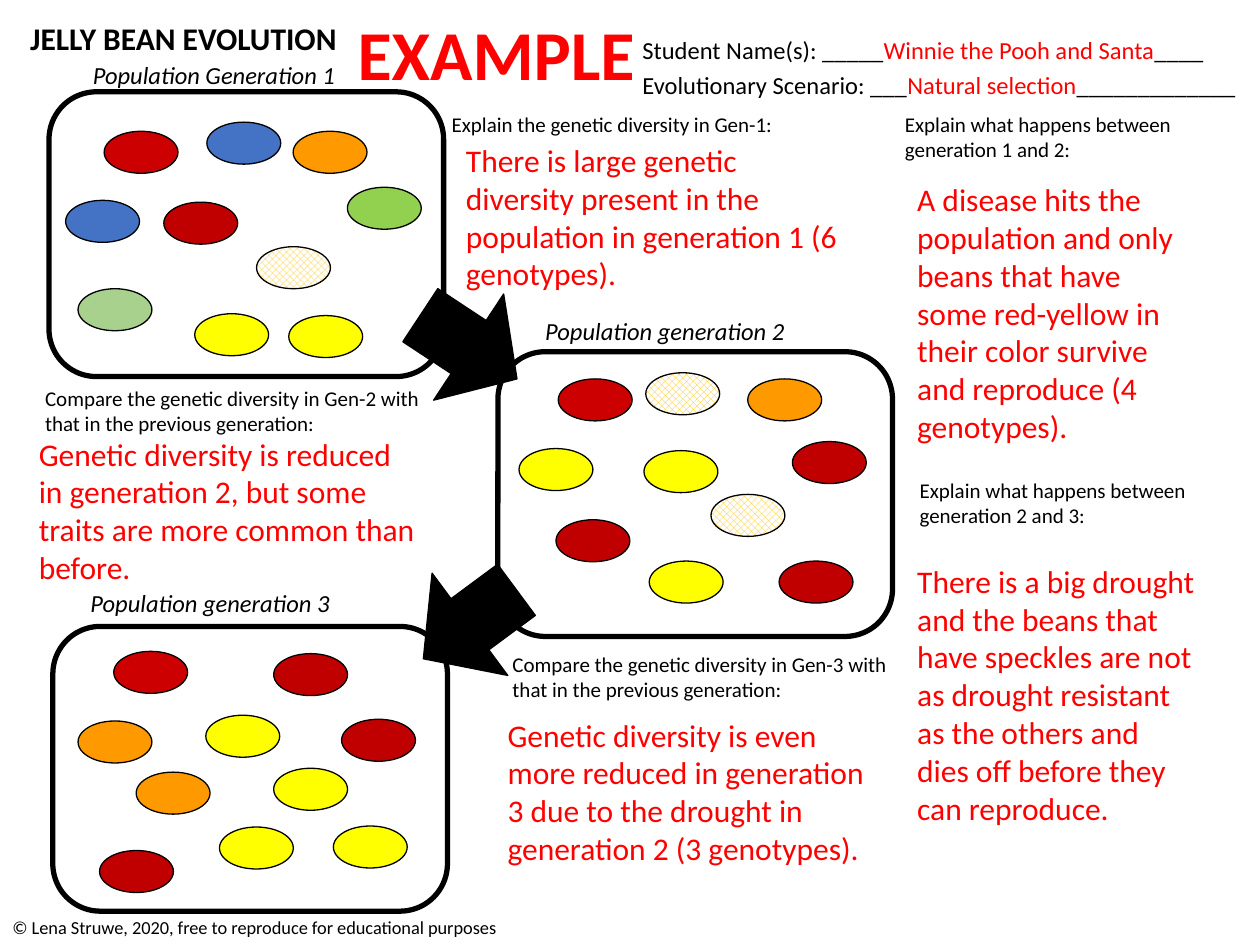
"""Build the jelly bean evolution worksheet with its example answers."""
import pptx
import pptx.dml.color
import pptx.enum.dml
import pptx.enum.shapes
import pptx.enum.text
import pptx.util

Pt = pptx.util.Pt
ShapeType = pptx.enum.shapes.MSO_SHAPE
COLORS = {
    "black": "000000", "white": "FFFFFF", "answer": "FF0000",
    "bright red": "CC0000", "red": "C00000", "orange": "FF9900",
    "yellow": "FFFF00", "blue": "4472C4", "green": "92D050",
    "pale green": "A9D18E", "speckle": "FFC000",
}
RGB = {name: pptx.dml.color.RGBColor.from_string(value) for name, value in COLORS.items()}


def add_figure(kind, box, color, line_width=0.75):
    shape = slide.shapes.add_shape(kind, *map(Pt, box))
    shape.shadow.inherit = False
    if color == "speckle":
        shape.fill.patterned()
        shape.fill.pattern = pptx.enum.dml.MSO_PATTERN.LARGE_CHECKER_BOARD
        shape.fill.fore_color.rgb = RGB["speckle"]
        shape.fill.back_color.rgb = RGB["white"]
    else:
        shape.fill.solid()
        shape.fill.fore_color.rgb = RGB[color]
    shape.line.color.rgb = RGB["black"]
    shape.line.width = Pt(line_width)
    return shape


def write_text(shape, box, runs, size, wrap=True, bold=False, italic=False):
    shape.left, shape.top, shape.width, shape.height = map(Pt, box)
    frame = shape.text_frame
    frame.word_wrap = wrap
    frame.auto_size = pptx.enum.text.MSO_AUTO_SIZE.SHAPE_TO_FIT_TEXT
    frame.vertical_anchor = pptx.enum.text.MSO_ANCHOR.TOP
    paragraph = frame.paragraphs[0]
    paragraph.alignment = pptx.enum.text.PP_ALIGN.LEFT
    for text, color in runs:
        run = paragraph.add_run()
        run.text = text
        run.font.name = "Calibri"
        run.font.size = Pt(size)
        run.font.bold = bold
        run.font.italic = italic
        run.font.color.rgb = RGB[color]


presentation = pptx.Presentation()
presentation.slide_width = Pt(720)
presentation.slide_height = Pt(540)
slide = presentation.slides.add_slide(presentation.slide_layouts[5])

write_text(slide.shapes.title, (10, 7.2, 196, 29), [("JELLY BEAN EVOLUTION", "black")],
           18, wrap=False, bold=True)

for left, top in [(28, 52.5), (284.5, 201), (30.2, 358)]:
    add_figure(ShapeType.ROUNDED_RECTANGLE, (left, top, 225.5, 162.7), "white", 3)

for left, top, rotation in [(234.7, 162, 33.4), (235.4, 320.4, 143.5)]:
    arrow = add_figure(ShapeType.RIGHT_ARROW, (left, top, 66.2, 72.7), "black")
    arrow.rotation = rotation

generations = [
    [("bright red", 59.5, 75), ("red", 93.6, 115.5), ("pale green", 44.6, 165),
     ("speckle", 146.6, 141), ("orange", 167.5, 75), ("yellow", 111.3, 179.3),
     ("blue", 118.2, 69.8), ("green", 198.5, 107), ("blue", 37.5, 114.5),
     ("yellow", 165, 180.3)],
    [("bright red", 319, 216.5), ("red", 445.2, 320.6), ("speckle", 406.3, 282.5),
     ("orange", 427.3, 216.5), ("yellow", 371, 320.6), ("yellow", 368, 257.5),
     ("red", 317.7, 297), ("red", 452.8, 252.3), ("speckle", 369, 213),
     ("yellow", 296.6, 256.3)],
    [("bright red", 65, 372.2), ("red", 195.2, 411), ("orange", 77.8, 441.2),
     ("yellow", 156.4, 439), ("yellow", 117.6, 408.7), ("red", 156.4, 373.5),
     ("red", 56.9, 486), ("yellow", 190.5, 472), ("yellow", 125.4, 472.6),
     ("orange", 44.6, 412)],
]
for beans in generations:
    for color, left, top in beans:
        add_figure(ShapeType.OVAL, (left, top, 42.2, 24), color)

captions = [
    ("Population Generation 1", (46, 31, 177, 24.2)),
    ("Population generation 2", (304.5, 177, 175, 24.2)),
    ("Population generation 3", (44.6, 332.7, 175, 24.2)),
]
for text, box in captions:
    write_text(slide.shapes.add_textbox(0, 0, 0, 0), box, [(text, "black")],
               14, wrap=False, italic=True)

prompts = [
    ("Explain the genetic diversity in Gen-1:", (251, 60, 234, 21.8)),
    ("Explain what happens between generation 1 and 2:", (510, 60, 186.5, 36)),
    ("Explain what happens between generation 2 and 3:", (518.4, 269.3, 186.5, 36)),
    ("Compare the genetic diversity in Gen-2 with that in the previous generation:",
     (18.7, 216.7, 249, 36)),
    ("Compare the genetic diversity in Gen-3 with that in the previous generation:",
     (285.8, 368.6, 249, 36)),
]
for text, box in prompts:
    write_text(slide.shapes.add_textbox(0, 0, 0, 0), box, [(text, "black")], 12)

answers = [
    ("There is large genetic diversity present in the population in generation 1 "
     "(6 genotypes).", (259.2, 77, 230.4, 94.3)),
    ("Genetic diversity is reduced in generation 2, but some traits are more common "
     "than before.", (15.1, 244.8, 230.4, 94.3)),
    ("Genetic diversity is even more reduced in generation 3 due to the drought in "
     "generation 2 (3 genotypes).", (283, 405.4, 230.4, 94.3)),
    ("A disease hits the population and only beans that have some red-yellow in their "
     "color survive and reproduce (4 genotypes).", (517, 99.4, 173.5, 160)),
    ("There is a big drought and the beans that have speckles are not as drought "
     "resistant as the others and dies off before they can reproduce.",
     (517, 317.5, 173.5, 160)),
]
for text, box in answers:
    write_text(slide.shapes.add_textbox(0, 0, 0, 0), box, [(text, "answer")], 18)

write_text(slide.shapes.add_textbox(0, 0, 0, 0), (197.3, 2.2, 174.2, 55.4),
           [("EXAMPLE", "answer")], 40, wrap=False, bold=True)

fields = [
    ("Student Name(s): _____", "Winnie the Pooh and Santa", "____",
     (360, 16.6, 338.4, 24.2)),
    ("Evolutionary Scenario: ___", "Natural selection", "_____________",
     (360, 36.4, 357, 24.2)),
]
for label, entry, rule, box in fields:
    write_text(slide.shapes.add_textbox(0, 0, 0, 0), box,
               [(label, "black"), (entry, "answer"), (rule, "black")], 14, wrap=False)

write_text(slide.shapes.add_textbox(0, 0, 0, 0), (0, 520, 296.6, 20),
           [("© Lena Struwe, 2020, free to reproduce for educational purposes", "black")],
           10.5, wrap=False)

presentation.save("out.pptx")
